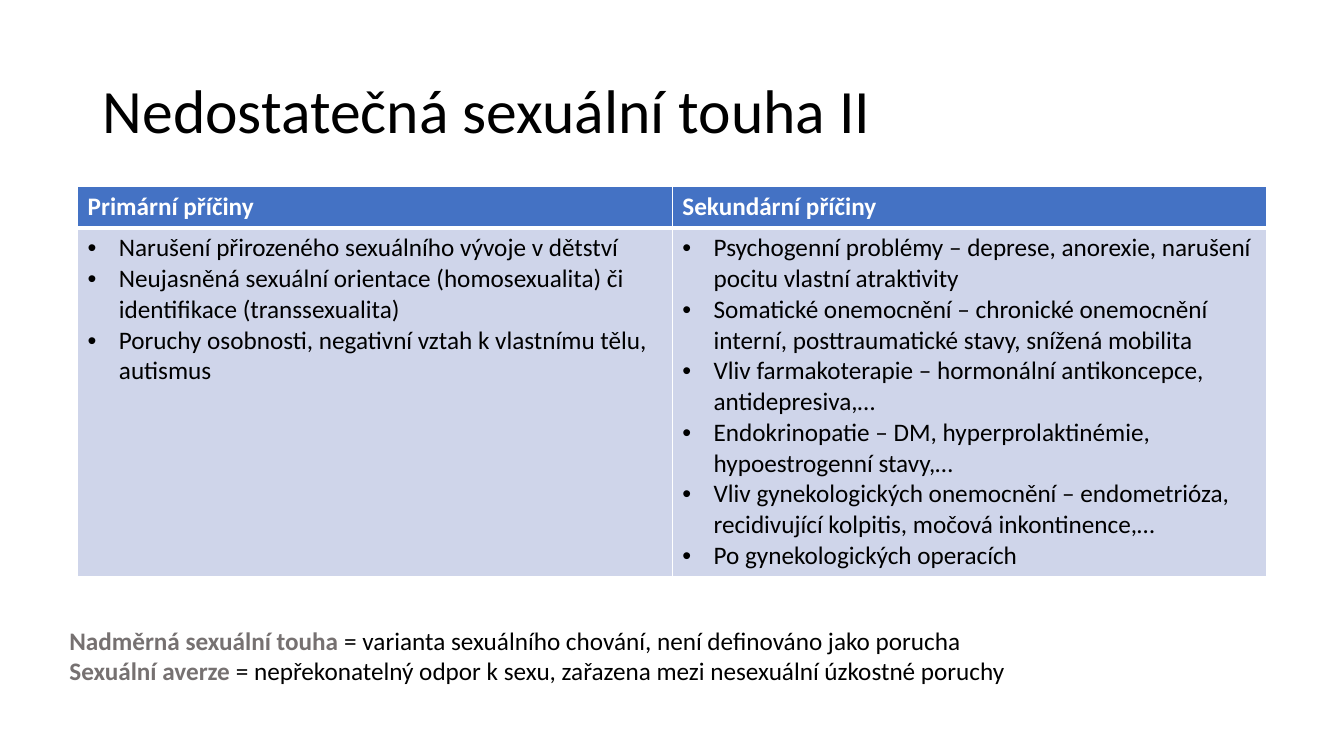
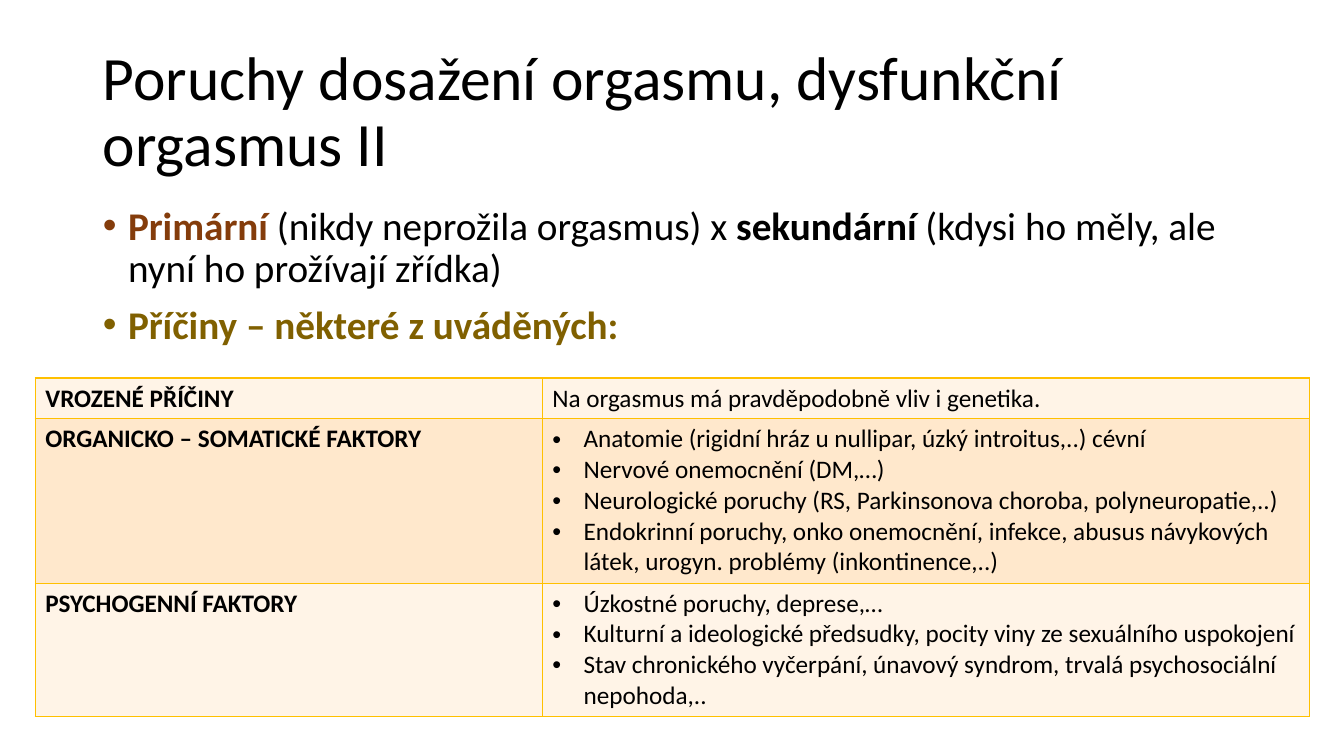
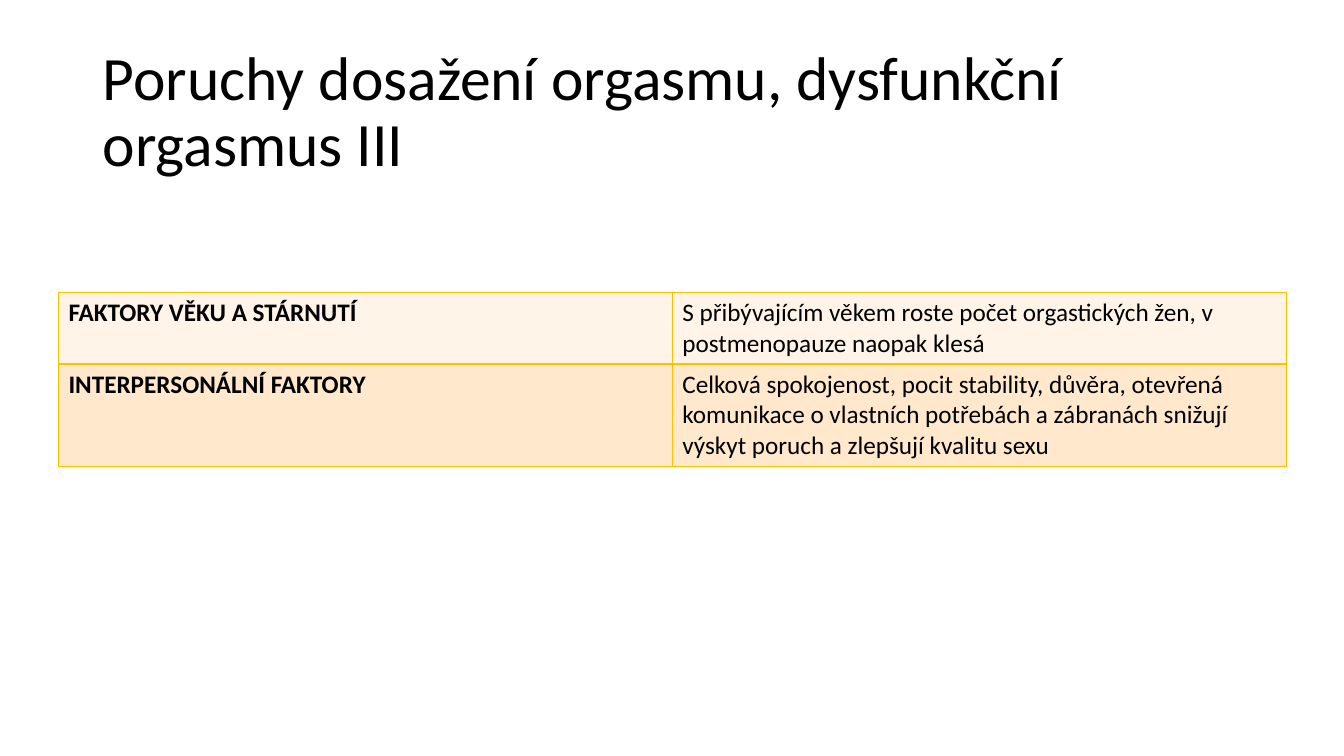
from lxml import etree
from pptx import Presentation
from pptx.dml.color import RGBColor
from pptx.enum import text as txt
from pptx.oxml import ns
from pptx.util import Emu, Inches, Pt

FONT = "Calibri"
BLACK, WHITE, GREY = "000000", "FFFFFF", "767171"
BLUE, PALE_BLUE = "4472C4", "CFD5EA"
GOLD, LIGHT_CREAM, DARK_CREAM = "FFC000", "FFF4E7", "FFE8CC"
BROWN, OLIVE = "843C0B", "806000"
TITLE_BOX = (0.92, 0.4, 11.5, 1.45)
TITLE_AND_BODY, TITLE_ONLY = 1, 5


def color(code):
    return RGBColor.from_string(code)


def place(shape, box):
    shape.left, shape.top, shape.width, shape.height = map(Inches, box)


def add_bullet(para, indent):
    props = para._p.get_or_add_pPr()
    props.set("marL", str(Inches(indent)))
    props.set("indent", str(-Inches(indent)))
    etree.SubElement(props, ns.qn("a:buFont"), typeface="Arial")
    etree.SubElement(props, ns.qn("a:buChar"), char="•")


def write(frame, paragraphs, size, indent=0, line=1.0, gap=0):
    """Fill a frame; each paragraph is a list of (text, colour, bold) spans."""
    for index, spans in enumerate(paragraphs):
        para = frame.add_paragraph() if index else frame.paragraphs[0]
        if indent:
            add_bullet(para, indent)
        para.alignment = txt.PP_ALIGN.LEFT
        para.line_spacing = line
        para.space_before = Pt(gap if index else 0)
        for words, code, bold in spans:
            span = para.add_run()
            span.text = words
            span.font.name, span.font.size = FONT, Pt(size)
            span.font.bold = bold
            span.font.color.rgb = color(code)


def add_page(deck, title, layout=TITLE_ONLY):
    page = deck.slides.add_slide(deck.slide_layouts[layout])
    place(page.shapes.title, TITLE_BOX)
    frame = page.shapes.title.text_frame
    frame.auto_size = txt.MSO_AUTO_SIZE.NONE
    frame.vertical_anchor = txt.MSO_ANCHOR.MIDDLE
    write(frame, [[(title, BLACK, False)]], 44, line=0.9)
    return page


def add_body(page, box, paragraphs):
    body = page.placeholders[1]
    place(body, box)
    body.text_frame.auto_size = txt.MSO_AUTO_SIZE.NONE
    write(body.text_frame, paragraphs, 28, indent=0.25, line=0.9, gap=10)


def add_note(page, box, paragraphs):
    note = page.shapes.add_textbox(*map(Inches, box))
    note.text_frame.word_wrap = True
    write(note.text_frame, paragraphs, 18)


def set_borders(cell, code, bottom=1):
    props = cell._tc.get_or_add_tcPr()
    for side, width in (("L", 1), ("R", 1), ("T", 1), ("B", bottom)):
        edge = etree.SubElement(props, ns.qn("a:ln" + side), w=str(Pt(width)))
        fill = etree.SubElement(edge, ns.qn("a:solidFill"))
        etree.SubElement(fill, ns.qn("a:srgbClr"), val=code)


def add_grid(page, left, top, widths, heights, rows, style):
    """Draw a table; a cell is a string, or a list of strings for bullets.

    style(row, column) gives fill, text colour, bold, border, bottom width.
    """
    frame = page.shapes.add_table(
        len(rows), len(widths), Inches(left), Inches(top),
        Inches(sum(widths)), Inches(sum(heights)))
    table = frame.table
    table.first_row = table.horz_banding = False
    for column, width in zip(table.columns, widths):
        column.width = Inches(width)
    for row, height in zip(table.rows, heights):
        row.height = Inches(height)
    for r, row in enumerate(rows):
        for c, content in enumerate(row):
            fill, code, bold, border, bottom = style(r, c)
            cell = table.cell(r, c)
            set_borders(cell, border, bottom)
            cell.fill.solid()
            cell.fill.fore_color.rgb = color(fill)
            listed = isinstance(content, list)
            lines = content if listed else [content]
            write(cell.text_frame, [[(words, code, bold)] for words in lines],
                  18, indent=0.31 if listed else 0)


def blue_style(row, column):
    if row == 0:
        return BLUE, WHITE, True, WHITE, 3
    return PALE_BLUE, BLACK, False, WHITE, 1


def cream_style(row, column):
    return DARK_CREAM if row % 2 else LIGHT_CREAM, BLACK, column == 0, GOLD, 1


def desire_page(deck):
    page = add_page(deck, "Nedostatečná sexuální touha II")
    add_grid(page, 0.77, 1.85, [5.9, 5.9], [0.41, 3.44], [
        ["Primární příčiny", "Sekundární příčiny"],
        [["Narušení přirozeného sexuálního vývoje v dětství",
          "Neujasněná sexuální orientace (homosexualita) či identifikace (transsexualita)",
          "Poruchy osobnosti, negativní vztah k vlastnímu tělu, autismus"],
         ["Psychogenní problémy – deprese, anorexie, narušení pocitu vlastní atraktivity",
          "Somatické onemocnění – chronické onemocnění interní, posttraumatické stavy, snížená mobilita",
          "Vliv farmakoterapie – hormonální antikoncepce, antidepresiva,…",
          "Endokrinopatie – DM, hyperprolaktinémie, hypoestrogenní stavy,…",
          "Vliv gynekologických onemocnění – endometrióza, recidivující kolpitis, močová inkontinence,…",
          "Po gynekologických operacích"]],
    ], blue_style)
    add_note(page, (0.59, 6.15, 12.16, 0.71), [
        [("Nadměrná sexuální touha ", GREY, True),
         ("= varianta sexuálního chování, není definováno jako porucha", BLACK, False)],
        [("Sexuální averze ", GREY, True),
         ("= nepřekonatelný odpor k sexu, zařazena mezi nesexuální úzkostné poruchy",
          BLACK, False)],
    ])


def causes_page(deck):
    page = add_page(deck, "Poruchy dosažení orgasmu, dysfunkční orgasmus II",
                    TITLE_AND_BODY)
    add_body(page, (0.92, 2, 11.5, 1.75), [
        [("Primární", BROWN, True),
         (" (nikdy neprožila orgasmus) x ", BLACK, False),
         ("sekundární", BLACK, True),
         (" (kdysi ho měly, ale nyní ho prožívají zřídka)", BLACK, False)],
        [("Příčiny – některé z uváděných:", OLIVE, True)],
    ])
    add_grid(page, 0.35, 3.75, [5.03, 7.61], [0.4, 1.63, 1.32], [
        ["VROZENÉ PŘÍČINY", "Na orgasmus má pravděpodobně vliv i genetika."],
        ["ORGANICKO – SOMATICKÉ FAKTORY",
         ["Anatomie (rigidní hráz u nullipar, úzký introitus,..) cévní",
          "Nervové onemocnění (DM,…)",
          "Neurologické poruchy (RS, Parkinsonova choroba, polyneuropatie,..)",
          "Endokrinní poruchy, onko onemocnění, infekce, abusus návykových látek, "
          "urogyn. problémy (inkontinence,..)"]],
        ["PSYCHOGENNÍ FAKTORY",
         ["Úzkostné poruchy, deprese,…",
          "Kulturní a ideologické předsudky, pocity viny ze sexuálního uspokojení",
          "Stav chronického vyčerpání, únavový syndrom, trvalá psychosociální nepohoda,.."]],
    ], cream_style)


def factors_page(deck):
    page = add_page(deck, "Poruchy dosažení orgasmu, dysfunkční orgasmus III")
    add_grid(page, 0.58, 2.9, [6.09, 6.09], [0.71, 1.01], [
        ["FAKTORY VĚKU A STÁRNUTÍ",
         "S přibývajícím věkem roste počet orgastických žen, v postmenopauze naopak klesá"],
        ["INTERPERSONÁLNÍ FAKTORY",
         "Celková spokojenost, pocit stability, důvěra, otevřená komunikace o vlastních "
         "potřebách a zábranách snižují výskyt poruch a zlepšují kvalitu sexu"],
    ], cream_style)


def main():
    deck = Presentation()
    deck.slide_width, deck.slide_height = Emu(12192000), Inches(7.5)
    desire_page(deck)
    causes_page(deck)
    factors_page(deck)
    deck.save("out.pptx")


if __name__ == "__main__":
    main()
